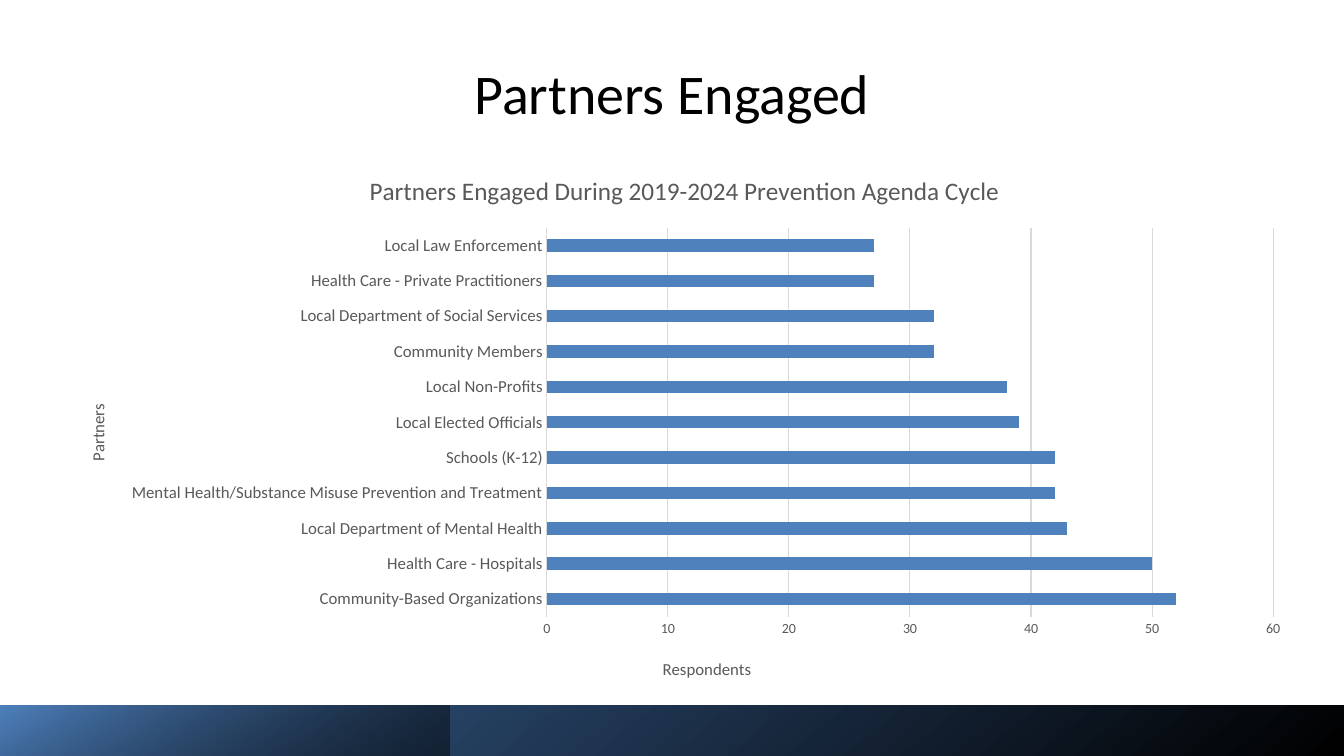
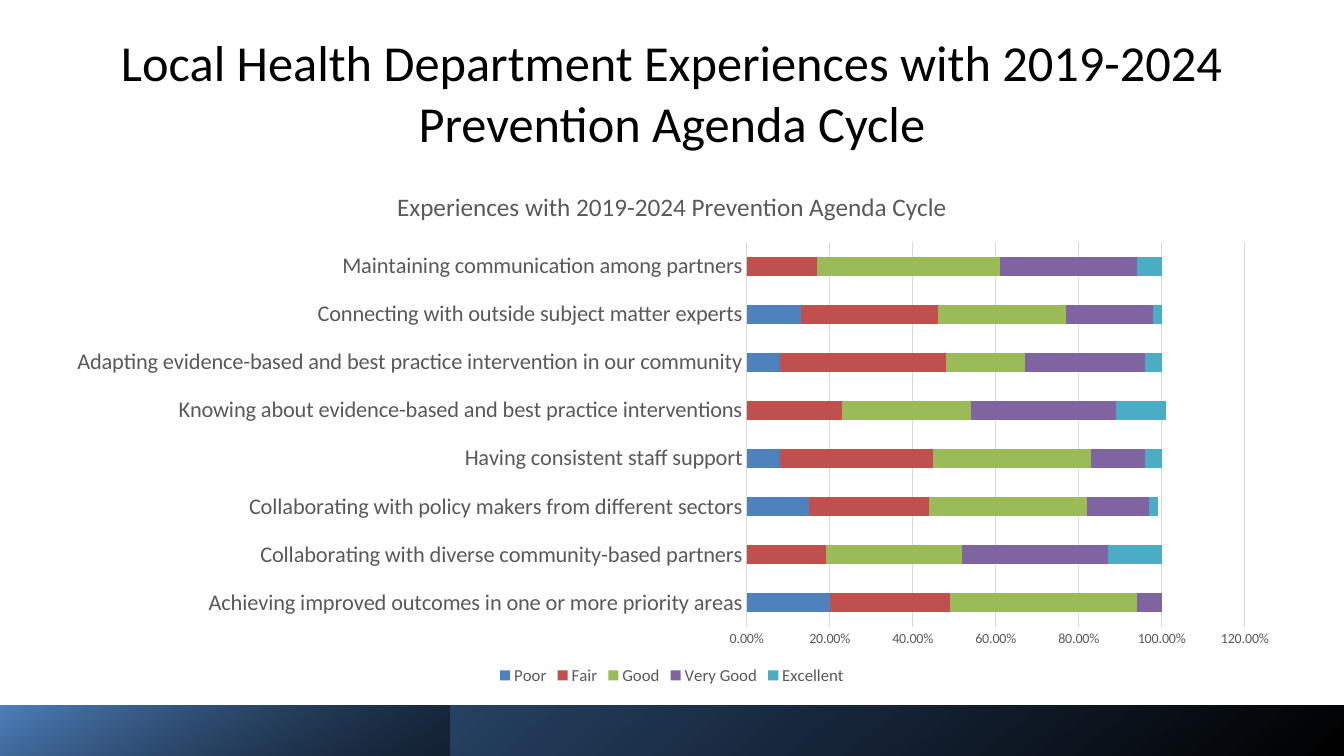
from lxml import etree
from pptx import Presentation
from pptx.chart.data import CategoryChartData
from pptx.dml.color import RGBColor
from pptx.enum.chart import XL_CHART_TYPE, XL_LEGEND_POSITION, XL_TICK_MARK
from pptx.enum.shapes import MSO_SHAPE
from pptx.enum.text import MSO_ANCHOR, PP_ALIGN
from pptx.oxml.ns import qn
from pptx.util import Inches, Pt

RECT = MSO_SHAPE.RECTANGLE
MIDDLE = MSO_ANCHOR.MIDDLE
CENTER = PP_ALIGN.CENTER
CLUSTERED = XL_CHART_TYPE.BAR_CLUSTERED
STACKED = XL_CHART_TYPE.BAR_STACKED
BOTTOM = XL_LEGEND_POSITION.BOTTOM
NO_TICK = XL_TICK_MARK.NONE

FONT = "Calibri"
BLACK = RGBColor(0x00, 0x00, 0x00)
GRAY = RGBColor(0x59, 0x59, 0x59)
GRID = RGBColor(0xD9, 0xD9, 0xD9)
NAVY = RGBColor(0x37, 0x60, 0x92)
BLUE = RGBColor(0x4F, 0x81, 0xBD)
RED = RGBColor(0xC0, 0x50, 0x4D)
GREEN = RGBColor(0x9B, 0xBB, 0x59)
PURPLE = RGBColor(0x80, 0x64, 0xA2)
TEAL = RGBColor(0x4B, 0xAC, 0xC6)
SERIES_COLORS = [BLUE, RED, GREEN, PURPLE, TEAL]

WIDTH = 13.33
BAND_TOP, BAND_HEIGHT = 7, 0.5
BANDS = [
    (WIDTH, NAVY, 130, 100),
    (4.46, BLUE, 120, 46),
]

SLIDES = [
    {
        "title": "Partners Engaged",
        "title_size": 40,
        "type": CLUSTERED,
        "box": (0.58, 1.51, 12.42, 5.36),
        "plot": {"x": 0.39, "y": 0.14, "w": 0.58, "h": 0.72},
        "chart_title": "Partners Engaged During 2019-2024 Prevention Agenda Cycle",
        "axis_titles": [
            ("Partners", {"x": 0.02, "y": 0.46}),
            ("Respondents", {"x": 0.48, "y": 0.93}),
        ],
        "label_size": 12,
        "scale": (60, 10, "General"),
        "gap": 182,
        "categories": [
            "Community-Based Organizations",
            "Health Care - Hospitals",
            "Local Department of Mental Health",
            "Mental Health/Substance Misuse Prevention and Treatment",
            "Schools (K-12)",
            "Local Elected Officials",
            "Local Non-Profits",
            "Community Members",
            "Local Department of Social Services",
            "Health Care - Private Practitioners",
            "Local Law Enforcement",
        ],
        "series": {"Series 1": [52, 50, 43, 42, 42, 39, 38, 32, 32, 27, 27]},
    },
    {
        "title": "Local Health Department Experiences with 2019-2024 Prevention Agenda Cycle",
        "title_size": 36,
        "type": STACKED,
        "box": (0.49, 1.68, 12.35, 5.16),
        "plot": {"x": 0.56, "y": 0.14, "w": 0.4, "h": 0.74},
        "chart_title": "Experiences with 2019-2024 Prevention Agenda Cycle",
        "axis_titles": [],
        "label_size": 16,
        "scale": (1.2, 0.2, "0.00%"),
        "gap": 150,
        "categories": [
            "Achieving improved outcomes in one or more priority areas",
            "Collaborating with diverse community-based partners",
            "Collaborating with policy makers from different sectors",
            "Having consistent staff support",
            "Knowing about evidence-based and best practice interventions",
            "Adapting evidence-based and best practice intervention in our community",
            "Connecting with outside subject matter experts",
            "Maintaining communication among partners",
        ],
        "series": {
            "Poor": [0.2, 0, 0.15, 0.08, 0, 0.08, 0.13, 0],
            "Fair": [0.29, 0.19, 0.29, 0.37, 0.23, 0.4, 0.33, 0.17],
            "Good": [0.45, 0.33, 0.38, 0.38, 0.31, 0.19, 0.31, 0.44],
            "Very Good": [0.06, 0.35, 0.15, 0.13, 0.35, 0.29, 0.21, 0.33],
            "Excellent": [0, 0.13, 0.02, 0.04, 0.12, 0.04, 0.02, 0.06],
        },
    },
]


def set_font(font, size, color=GRAY):
    font.name = FONT
    font.size = Pt(size)
    font.bold = False
    font.color.rgb = color


def set_layout(parent, index, fractions):
    for old in parent.findall(qn("c:layout")):
        parent.remove(old)
    layout = etree.Element(qn("c:layout"))
    manual = etree.SubElement(layout, qn("c:manualLayout"))
    if "w" in fractions:
        etree.SubElement(manual, qn("c:layoutTarget"), val="inner")
    for key in "xy":
        etree.SubElement(manual, qn(f"c:{key}Mode"), val="edge")
    for key, value in fractions.items():
        etree.SubElement(manual, qn(f"c:{key}"), val=str(value))
    parent.insert(index, layout)


prs = Presentation()
prs.slide_width = Inches(WIDTH)
prs.slide_height = Inches(7.5)

for page in SLIDES:
    s = prs.slides.add_slide(prs.slide_layouts[6])

    title = s.shapes.add_textbox(Inches(1.1), Inches(0.31), Inches(11.13), Inches(1.2))
    tf = title.text_frame
    tf.word_wrap = True
    tf.vertical_anchor = MIDDLE
    tf.text = page["title"]
    p = tf.paragraphs[0]
    p.alignment = CENTER
    set_font(p.runs[0].font, page["title_size"], BLACK)

    for width, color, angle, opacity in BANDS:
        band = s.shapes.add_shape(RECT, 0, Inches(BAND_TOP), Inches(width), Inches(BAND_HEIGHT))
        band.shadow.inherit = False
        band.line.fill.background()
        band.fill.gradient()
        band.fill.gradient_angle = angle
        for stop, stop_color in zip(band.fill.gradient_stops, (BLACK, color)):
            stop.color.rgb = stop_color
        if opacity < 100:
            start = next(band.element.iter(qn("a:srgbClr")))
            etree.SubElement(start, qn("a:alpha"), val=str(opacity * 1000))

    data = CategoryChartData()
    data.categories = page["categories"]
    for name, values in page["series"].items():
        data.add_series(name, values)
    box = [Inches(v) for v in page["box"]]
    chart = s.shapes.add_chart(page["type"], *box, data).chart
    set_font(chart.font, 10, BLACK)

    chart.has_title = True
    tf = chart.chart_title.text_frame
    tf.text = page["chart_title"]
    set_font(tf.paragraphs[0].runs[0].font, 18)

    plot = chart.plots[0]
    plot.vary_by_categories = False
    plot.gap_width = page["gap"]
    for series, color in zip(plot.series, SERIES_COLORS):
        series.format.fill.solid()
        series.format.fill.fore_color.rgb = color
        series.invert_if_negative = False

    cat_axis, val_axis = chart.category_axis, chart.value_axis
    for axis, size in ((cat_axis, page["label_size"]), (val_axis, 10)):
        axis.major_tick_mark = NO_TICK
        axis.minor_tick_mark = NO_TICK
        set_font(axis.tick_labels.font, size)
    cat_axis.has_major_gridlines = False
    val_axis.has_major_gridlines = True
    for line in (cat_axis.format.line, val_axis.major_gridlines.format.line):
        line.color.rgb = GRID
        line.width = Pt(0.75)
    val_axis.format.line.fill.background()
    val_axis.minimum_scale = 0
    val_axis.maximum_scale, val_axis.major_unit, number_format = page["scale"]
    val_axis.tick_labels.number_format = number_format
    val_axis.tick_labels.number_format_is_linked = False

    for axis, (text, place) in zip((cat_axis, val_axis), page["axis_titles"]):
        tf = axis.axis_title.text_frame
        tf.text = text
        set_font(tf.paragraphs[0].runs[0].font, 12)
        set_layout(axis.axis_title.element, 1, place)

    chart.has_legend = page["type"] == STACKED
    if chart.has_legend:
        chart.legend.position = BOTTOM
        chart.legend.include_in_layout = False
        set_font(chart.legend.font, 12)

    set_layout(next(chart.element.iter(qn("c:plotArea"))), 0, page["plot"])

prs.save("out.pptx")
